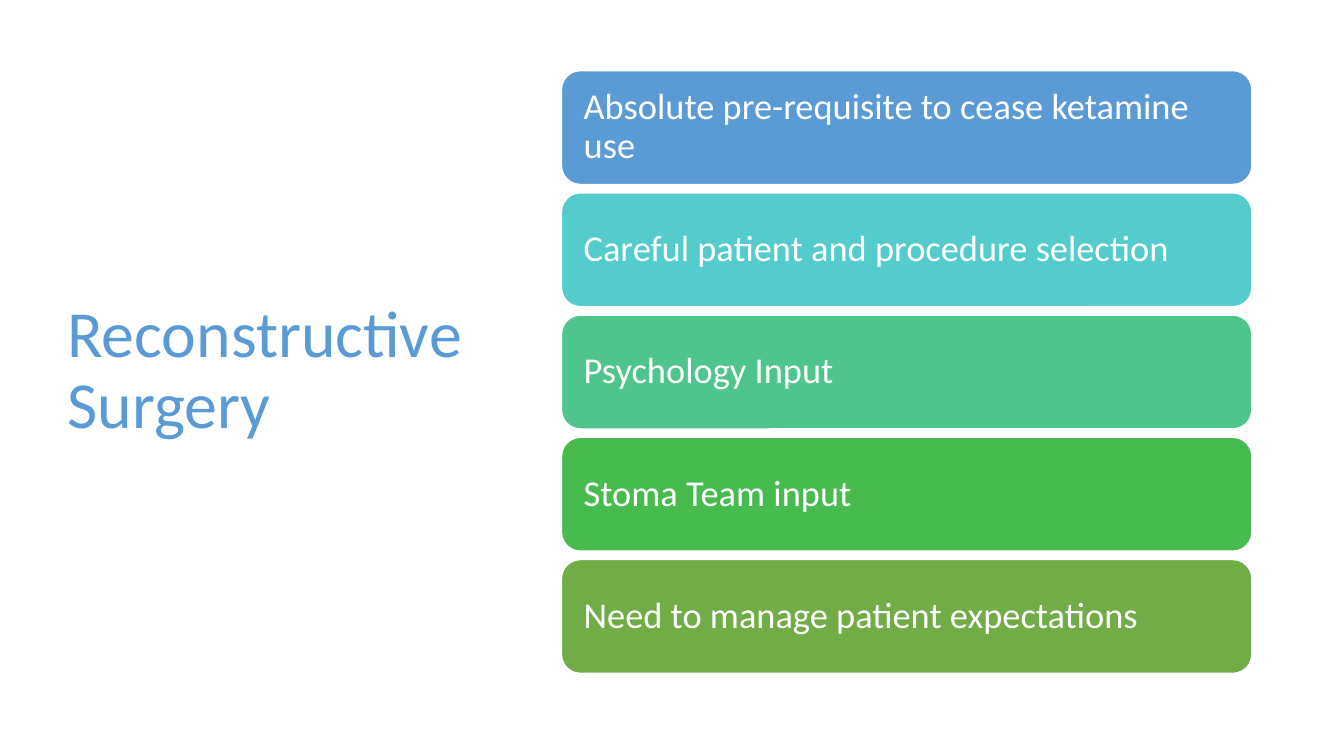
from dataclasses import dataclass

from pptx import Presentation
from pptx import util as u
from pptx.dml import color as col
from pptx.enum import shapes, text


@dataclass(frozen=True)
class Theme:
    font: str = "Calibri"
    blue: str = "5B9BD5"
    white: str = "FFFFFF"
    fills: tuple = ("5B9BD5", "54CCCD", "4DC58D", "48BB4F", "70AD47")
    head: int = 47
    body: int = 26


class Deck:
    def __init__(self, theme):
        self.theme = theme
        self.prs = Presentation()
        self.prs.slide_width, self.prs.slide_height = u.Cm(33.87), u.Cm(19.05)
        self.slide = self.prs.slides.add_slide(self.prs.slide_layouts[6])

    def label(self, shape, words, size, ink, pad):
        frame = shape.text_frame
        style = {
            "word_wrap": True,
            "vertical_anchor": text.MSO_ANCHOR.MIDDLE,
            "margin_left": u.Cm(pad),
            "margin_right": u.Cm(pad),
        }
        for name, value in style.items():
            setattr(frame, name, value)
        para = frame.paragraphs[0]
        para.alignment = text.PP_ALIGN.LEFT
        para.line_spacing = 0.9
        run = para.add_run()
        run.text = words
        for name, value in {"name": self.theme.font, "size": u.Pt(size)}.items():
            setattr(run.font, name, value)
        run.font.color.rgb = col.RGBColor.from_string(ink)

    def title(self, words, *box):
        shape = self.slide.shapes.add_textbox(*map(u.Cm, box))
        self.label(shape, words, self.theme.head, self.theme.blue, 0.25)

    def card(self, words, fill, *box):
        kind = shapes.MSO_SHAPE.ROUNDED_RECTANGLE
        shape = self.slide.shapes.add_shape(kind, *map(u.Cm, box))
        shape.shadow.inherit = False
        shape.fill.solid()
        shape.fill.fore_color.rgb = col.RGBColor.from_string(fill)
        shape.line.color.rgb = col.RGBColor.from_string(self.theme.white)
        shape.line.width = u.Pt(1)
        self.label(shape, words, self.theme.body, self.theme.white, 0.42)


def main():
    theme = Theme()
    deck = Deck(theme)
    deck.title("Reconstructive Surgery", 1.45, 1.73, 10.57, 15.29)
    points = (
        "Absolute pre-requisite to cease ketamine use",
        "Careful patient and procedure selection",
        "Psychology Input",
        "Stoma Team input",
        "Need to manage patient expectations",
    )
    top, pitch = 1.78, 3.08
    for row, (words, fill) in enumerate(zip(points, theme.fills)):
        deck.card(words, fill, 14.15, top + row * pitch, 17.4, 2.87)
    deck.prs.save("out.pptx")


if __name__ == "__main__":
    main()
